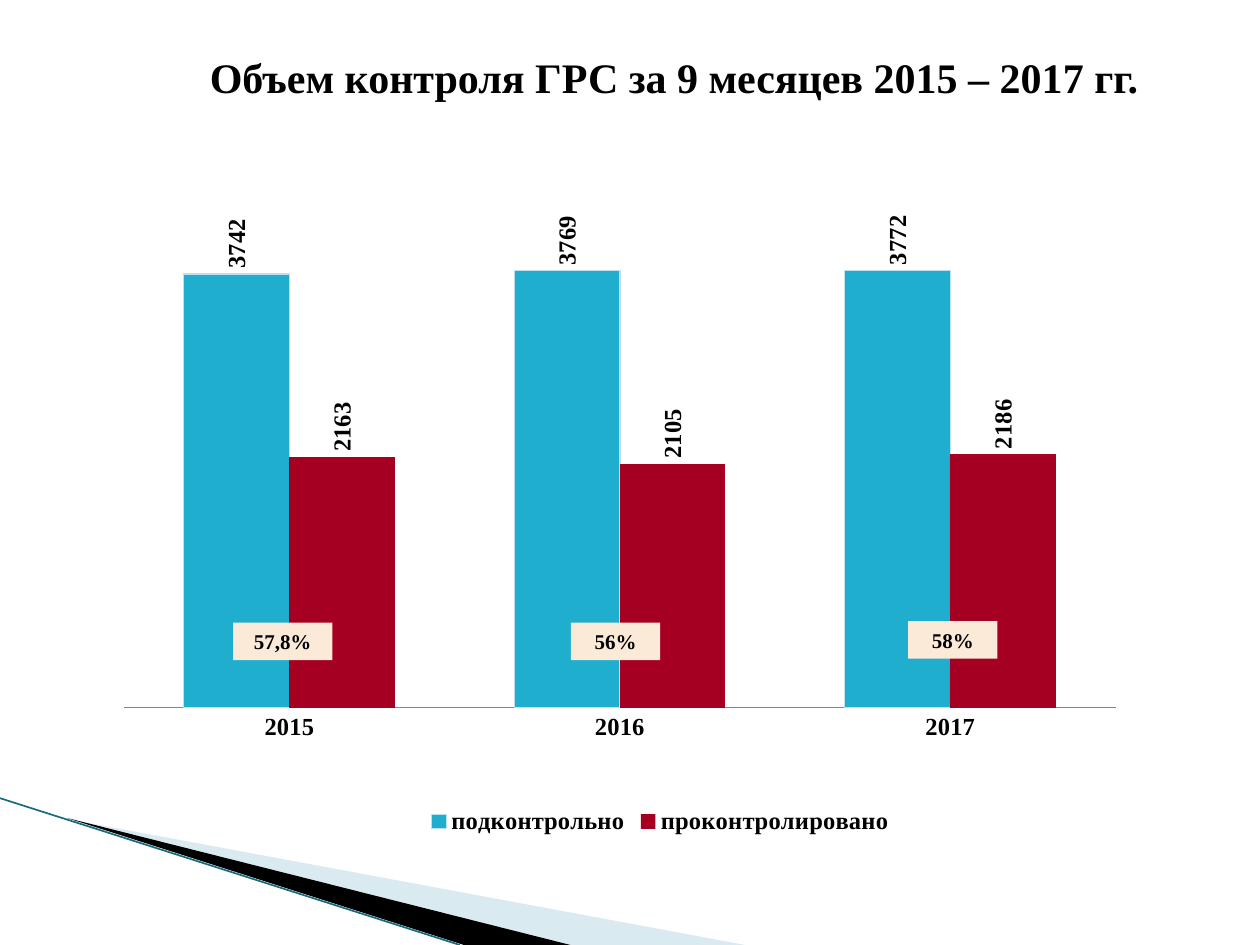
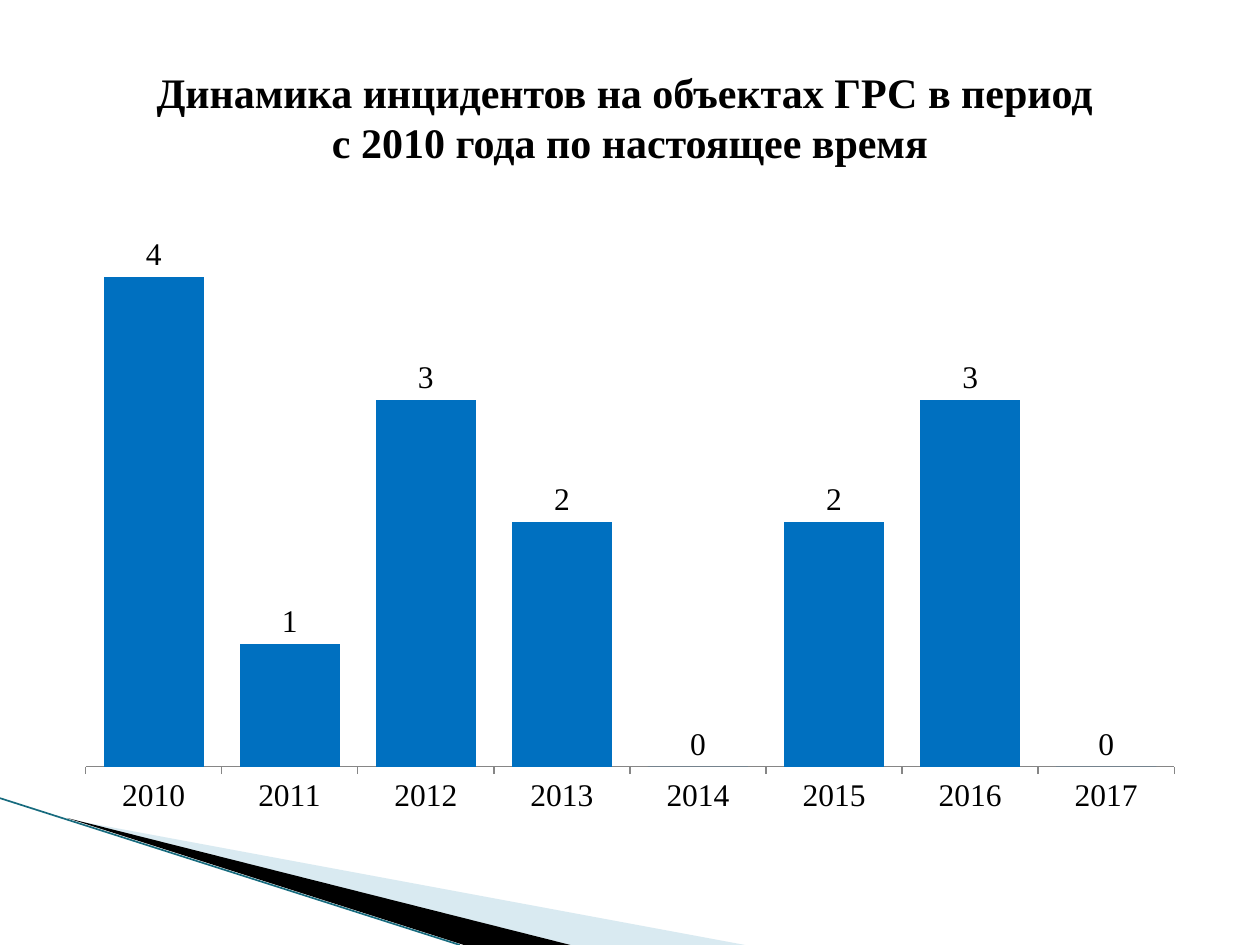
import pptx
import pptx.chart.data
import pptx.dml.color
import pptx.enum.chart
import pptx.enum.shapes
import pptx.enum.text
import pptx.oxml
import pptx.oxml.ns
import pptx.util
from dataclasses import dataclass
from typing import Any, Optional

Cm = pptx.util.Cm
Pt = pptx.util.Pt

FONT = "Times New Roman"
BLACK = "000000"
AXIS_GREY = "868686"
SHARE_FILL = "FCEAD8"
PALE_BLUE = "A0CBDC"
EDGE_TEAL = "176B7E"
BAR_BLUE = "0070C0"


@dataclass(frozen=True)
class Box:
    """A rectangle in centimetres."""
    left: float
    top: float
    width: float
    height: float

    def lengths(self) -> tuple:
        return tuple(Cm(v) for v in (self.left, self.top, self.width, self.height))


@dataclass(frozen=True)
class Wedge:
    corners: tuple
    color: str
    opacity: int = 100


@dataclass(frozen=True)
class Bars:
    name: str
    values: tuple
    color: str
    outline: Optional[str] = None


@dataclass(frozen=True)
class ColumnChart:
    box: Box
    plot: tuple  # left, top, width, height as shares of the chart
    years: tuple
    bars: tuple
    gap: int
    maximum: float
    text: dict
    ticks: bool = False
    legend: bool = False
    vertical_labels: bool = False


@dataclass(frozen=True)
class Share:
    label: str
    box: Box


WEDGES = (
    Wedge(((1.4, 16.52), (15.02, 19.05), (11.5, 19.05)), PALE_BLUE, 40),
    Wedge(((1.35, 16.49), (11.5, 19.05), (9.35, 19.05)), BLACK),
)
TITLE_TEXT = {"name": FONT, "size": Pt(24), "bold": True}
SHARE_TEXT = {"name": FONT, "size": Pt(12), "bold": True}

CONTROL_CHART = ColumnChart(
    box=Box(2.49, 3.73, 21.62, 13.21),
    plot=(0, 0.09, 0.925, 0.708),
    years=tuple(str(year) for year in range(2015, 2018)),
    bars=(
        Bars("подконтрольно", (3742, 3769, 3772), "1FAECD", "BDE0EF"),
        Bars("проконтролировано", (2163, 2105, 2186), "A50021"),
    ),
    gap=113,
    maximum=4000,
    text={"name": FONT, "size": Pt(14), "bold": True},
    legend=True,
    vertical_labels=True,
)
SHARES = (
    Share("57,8%", Box(4.7, 12.55, 2, 0.76)),
    Share("56%", Box(11.51, 12.55, 1.8, 0.76)),
    Share("58%", Box(18.31, 12.52, 1.8, 0.76)),
)
INCIDENT_CHART = ColumnChart(
    box=Box(1.27, 4.11, 22.86, 12.57),
    plot=(0.02, 0.02, 0.96, 0.883),
    years=tuple(str(year) for year in range(2010, 2018)),
    bars=(Bars("Инциденты", (4, 1, 3, 2, 0, 2, 3, 0), BAR_BLUE),),
    gap=36,
    maximum=4.5,
    text={"name": FONT, "size": Pt(18), "bold": False},
    ticks=True,
)


def rgb(value: str) -> pptx.dml.color.RGBColor:
    return pptx.dml.color.RGBColor.from_string(value)


def apply(target: Any, settings: dict) -> None:
    for attribute, value in settings.items():
        setattr(target, attribute, value)


def style_font(font: Any, settings: dict) -> None:
    apply(font, settings)
    font.color.rgb = rgb(BLACK)


def paint(fill: Any, color: str) -> None:
    fill.solid()
    fill.fore_color.rgb = rgb(color)


def write_centred(shape: Any, text: str, settings: dict, anchor: Any) -> None:
    frame = shape.text_frame
    apply(frame, {"word_wrap": True, "vertical_anchor": anchor})
    paragraph = frame.paragraphs[0]
    paragraph.text = text
    paragraph.alignment = pptx.enum.text.PP_ALIGN.CENTER
    style_font(paragraph.font, settings)


def add_wedge(slide: Any, wedge: Wedge) -> None:
    first, *others = [(Cm(x), Cm(y)) for x, y in wedge.corners]
    builder = slide.shapes.build_freeform(*first)
    builder.add_line_segments(others, close=True)
    shape = builder.convert_to_shape()
    shape.shadow.inherit = False
    shape.line.fill.background()
    paint(shape.fill, wedge.color)
    if wedge.opacity < 100:
        color = shape.fill._xPr.find(".//" + pptx.oxml.ns.qn("a:srgbClr"))
        alpha = pptx.oxml.parse_xml(
            f'<a:alpha {pptx.oxml.ns.nsdecls("a")} val="{wedge.opacity * 1000}"/>')
        color.append(alpha)


def add_corner(slide: Any) -> None:
    """Draw the folded corner at the bottom left."""
    for wedge in WEDGES:
        add_wedge(slide, wedge)
    edge = slide.shapes.add_connector(
        pptx.enum.shapes.MSO_CONNECTOR.STRAIGHT, Cm(0), Cm(16.09), Cm(9.27), Cm(19.05))
    edge.line.width = Pt(0.95)
    edge.line.color.rgb = rgb(EDGE_TEAL)
    edge._element.spPr.append(
        pptx.oxml.parse_xml(f'<a:effectLst {pptx.oxml.ns.nsdecls("a")}/>'))


def add_title(slide: Any, text: str, box: Box, anchor: Any) -> None:
    write_centred(slide.shapes.add_textbox(*box.lengths()), text, TITLE_TEXT, anchor)


def add_share(slide: Any, share: Share) -> None:
    plate = slide.shapes.add_shape(
        pptx.enum.shapes.MSO_SHAPE.RECTANGLE, *share.box.lengths())
    plate.shadow.inherit = False
    plate.line.fill.background()
    paint(plate.fill, SHARE_FILL)
    write_centred(plate, share.label, SHARE_TEXT, pptx.enum.text.MSO_ANCHOR.MIDDLE)


def fix_plot_area(chart: Any, plot: tuple) -> None:
    """Pin the inner plot area to the given shares of the chart."""
    area = chart._chartSpace.chart.plotArea
    for layout in area.findall(pptx.oxml.ns.qn("c:layout")):
        area.remove(layout)
    sizes = "".join(f'<c:{tag} val="{value}"/>' for tag, value in zip("xywh", plot))
    area.insert(0, pptx.oxml.parse_xml(
        f'<c:layout {pptx.oxml.ns.nsdecls("c")}><c:manualLayout>'
        '<c:layoutTarget val="inner"/><c:xMode val="edge"/><c:yMode val="edge"/>'
        f'{sizes}</c:manualLayout></c:layout>'))


def style_axes(chart: Any, design: ColumnChart) -> None:
    tick = pptx.enum.chart.XL_TICK_MARK
    apply(chart.value_axis, {
        "minimum_scale": 0, "maximum_scale": design.maximum,
        "has_major_gridlines": False, "visible": False})
    years = chart.category_axis
    apply(years, {
        "major_tick_mark": tick.OUTSIDE if design.ticks else tick.NONE,
        "minor_tick_mark": tick.NONE, "has_major_gridlines": False})
    years.format.line.color.rgb = rgb(AXIS_GREY)
    years.format.line.width = Pt(0.75)
    style_font(years.tick_labels.font, design.text)


def style_bars(series: Any, bars: Bars, design: ColumnChart) -> None:
    series.invert_if_negative = False
    paint(series.format.fill, bars.color)
    if bars.outline:
        series.format.line.color.rgb = rgb(bars.outline)
        series.format.line.width = Pt(0.75)
    else:
        series.format.line.fill.background()
    labels = series.data_labels
    apply(labels, {"show_value": True,
                   "position": pptx.enum.chart.XL_LABEL_POSITION.OUTSIDE_END})
    style_font(labels.font, design.text)
    if design.vertical_labels:
        body = labels._element.find(".//" + pptx.oxml.ns.qn("a:bodyPr"))
        body.set("rot", "-5400000")
        body.set("vert", "horz")


def add_column_chart(slide: Any, design: ColumnChart) -> None:
    data = pptx.chart.data.CategoryChartData(number_format="0")
    data.categories = design.years
    for bars in design.bars:
        data.add_series(bars.name, bars.values)
    chart = slide.shapes.add_chart(
        pptx.enum.chart.XL_CHART_TYPE.COLUMN_CLUSTERED, *design.box.lengths(), data).chart
    apply(chart, {"has_title": False, "has_legend": design.legend})
    style_font(chart.font, design.text)
    apply(chart.plots[0], {"gap_width": design.gap, "overlap": 0,
                           "vary_by_categories": False})
    style_axes(chart, design)
    for series, bars in zip(chart.plots[0].series, design.bars):
        style_bars(series, bars, design)
    if design.legend:
        apply(chart.legend, {"include_in_layout": False,
                             "position": pptx.enum.chart.XL_LEGEND_POSITION.BOTTOM})
        style_font(chart.legend.font, design.text)
    fix_plot_area(chart, design.plot)


def add_slide(deck: Any) -> Any:
    slide = deck.slides.add_slide(deck.slide_layouts[6])
    add_corner(slide)
    return slide


def main() -> None:
    deck = pptx.Presentation()
    apply(deck, {"slide_width": Cm(25.4), "slide_height": Cm(19.05)})
    anchor = pptx.enum.text.MSO_ANCHOR

    control = add_slide(deck)
    add_title(control, "Объем контроля ГРС за 9 месяцев 2015 – 2017 гг.",
              Box(2.49, 0.91, 22.2, 1.27), anchor.TOP)
    add_column_chart(control, CONTROL_CHART)
    for share in SHARES:
        add_share(control, share)

    incidents = add_slide(deck)
    add_column_chart(incidents, INCIDENT_CHART)
    add_title(incidents,
              "Динамика инцидентов на объектах ГРС в период \vс 2010 года по настоящее время",
              Box(1.27, 0.76, 22.86, 3.18), anchor.MIDDLE)

    deck.save("out.pptx")


if __name__ == "__main__":
    main()
